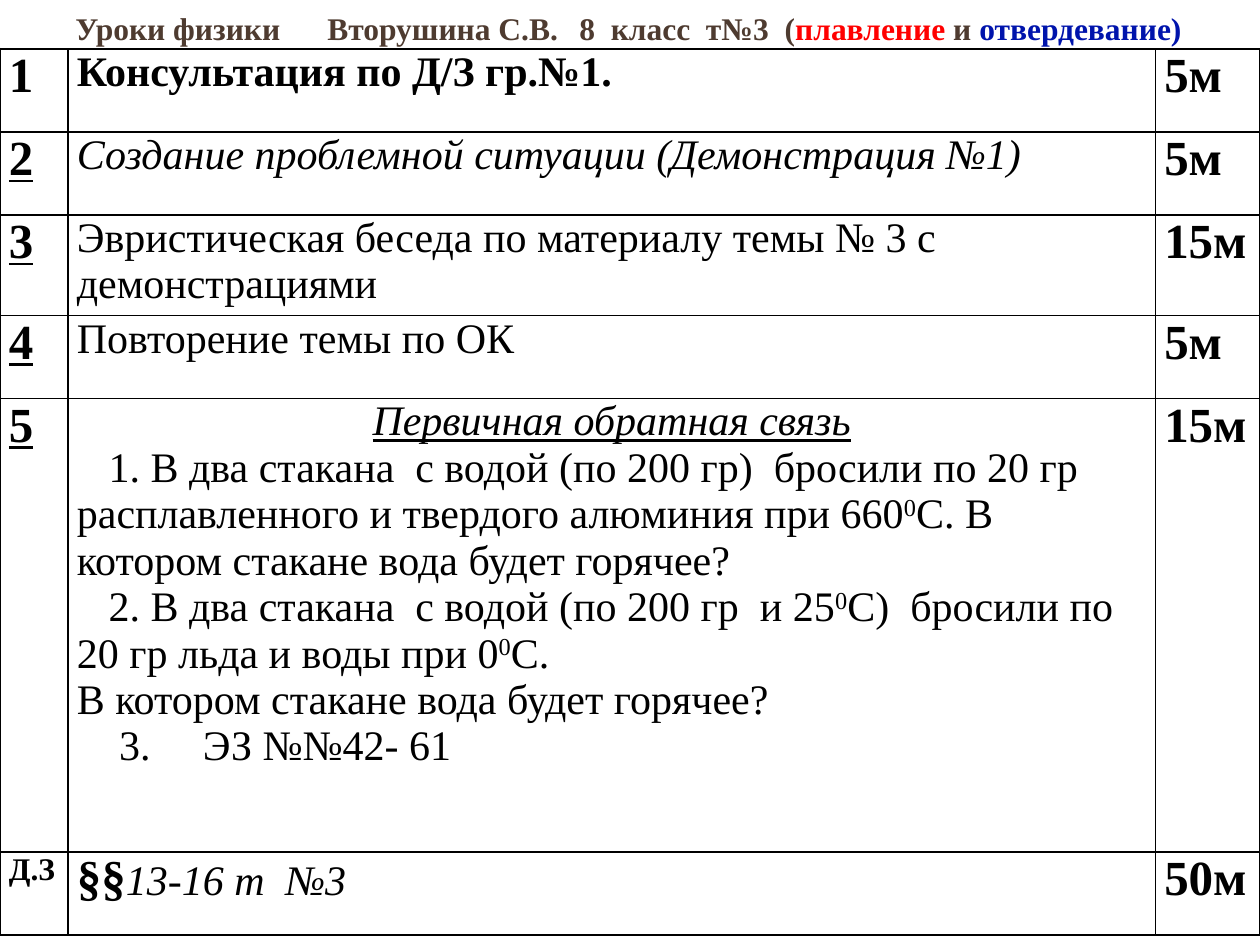
from dataclasses import dataclass

from lxml import etree
from pptx import Presentation
from pptx import util as u
from pptx.dml.color import RGBColor
from pptx.enum import text
from pptx.oxml import ns


@dataclass(frozen=True)
class Theme:
    font: str = "Times New Roman"
    black: str = "000000"
    brown: str = "4E3B30"
    red: str = "FF0000"
    blue: str = "0014AC"
    small: int = 18
    body: int = 24
    large: int = 28
    thin: float = 1
    thick: float = 1.5


T = Theme()


# Text helpers
def add_run(p, words, size=T.body, color=T.black, bold=False, italic=False,
            underline=False, raised=False):
    r = p.add_run()
    r.text = words
    f = r.font
    f.name, f.size, f.bold, f.italic = T.font, u.Pt(size), bold, italic
    f.underline = underline
    f.color.rgb = RGBColor.from_string(color)
    if raised:
        r._r.get_or_add_rPr().set("baseline", "30000")


def set_layout(p, indent=0, tabs=()):
    """First-line indent and tab stops, in centimetres."""
    pPr = p._p.get_or_add_pPr()
    pPr.set("marL", "0")
    pPr.set("indent", str(u.Cm(indent)))
    if tabs:
        stops = etree.SubElement(pPr, ns.qn("a:tabLst"))
        for pos in tabs:
            etree.SubElement(stops, ns.qn("a:tab"), pos=str(u.Cm(pos)), algn="l")


def set_border(cell, widths):
    tcPr = cell._tc.get_or_add_tcPr()
    for i, (side, width) in enumerate(zip("LRTB", widths)):
        ln = etree.Element(ns.qn("a:ln" + side), w=str(u.Pt(width)))
        fill = etree.SubElement(ln, ns.qn("a:solidFill"))
        etree.SubElement(fill, ns.qn("a:srgbClr"), val=T.black)
        tcPr.insert(i, ln)


# Lesson plan: number, content paragraphs, duration.
# A paragraph is (layout, runs); a run is (words, style).
PLAIN, BOLD, ITALIC = {}, {"bold": True}, {"italic": True}
HEADING = {"italic": True, "underline": True}
RAISED = {"raised": True}
TASK = {"indent": 0.64}

FEEDBACK = [
    ({"centred": True}, [("Первичная обратная связь", HEADING)]),
    (TASK, [("1. В два стакана  с водой (по 200 гр)  бросили по 20 гр "
             "расплавленного и твердого алюминия при 660", PLAIN), ("0", RAISED),
            ("С. В котором стакане вода будет горячее?", PLAIN)]),
    (TASK, [("2. В два стакана  с водой (по 200 гр  и 25", PLAIN), ("0", RAISED),
            ("С)  бросили по 20 гр льда и воды при 0", PLAIN), ("0", RAISED),
            ("С.", PLAIN)]),
    ({}, [("В котором стакане вода будет горячее?", PLAIN)]),
    ({"indent": 0.85, "tabs": [2.33]}, [("3.\tЭЗ №№42- 61", PLAIN)]),
]
LESSON = [
    ("1", [({}, [("Консультация по Д/З гр.№1.", BOLD)])], "5м"),
    ("2", [({}, [("Создание проблемной ситуации (Демонстрация №1)", ITALIC)])], "5м"),
    ("3", [({}, [("Эвристическая беседа по материалу темы № 3 с демонстрациями",
                  PLAIN)])], "15м"),
    ("4", [({}, [("Повторение темы по ОК", PLAIN)])], "5м"),
    ("5", FEEDBACK, "15м"),
    ("Д.З", [({}, [("§§", {"size": T.large, "bold": True}),
                   ("13-16 т  №3", ITALIC)])], "50м"),
]


def add_title(s, left, top, width, height):
    tf = s.shapes.add_textbox(left, top, width, height).text_frame
    tf.word_wrap = True
    tf.vertical_anchor = text.MSO_ANCHOR.MIDDLE
    p = tf.paragraphs[0]
    set_layout(p, tabs=[4.76, 10.34])
    for words, color in [("Уроки физики\tВторушина С.В.\t8  класс  т№3  (", T.brown),
                         ("плавление ", T.red), ("и ", T.brown),
                         ("отвердевание)", T.blue)]:
        add_run(p, words, T.small, color, bold=True)


def fill_content(tf, paragraphs):
    for i, (layout, runs) in enumerate(paragraphs):
        p = tf.add_paragraph() if i else tf.paragraphs[0]
        if layout.get("centred"):
            p.alignment = text.PP_ALIGN.CENTER
        else:
            set_layout(p, **layout)
        for words, style in runs:
            add_run(p, words, **style)


def add_plan(s, left, top, width):
    row_height, tall, number_w, time_w = u.Cm(1.67), u.Cm(9.14), u.Cm(1.37), u.Cm(2.11)
    last = len(LESSON) - 1
    heights = [tall if lines is FEEDBACK else row_height for _, lines, _ in LESSON]
    table = s.shapes.add_table(len(LESSON), 3, left, top, width, sum(heights)).table
    table.first_row = table.horz_banding = False
    for col, w in zip(table.columns, (number_w, width - number_w - time_w, time_w)):
        col.width = w

    for i, (number, lines, time) in enumerate(LESSON):
        table.rows[i].height = heights[i]
        cells = [table.cell(i, j) for j in range(3)]
        for j, cell in enumerate(cells):
            cell.margin_left = cell.margin_right = u.Cm(0.18)
            cell.margin_top = cell.margin_bottom = 0
            cell.fill.background()
            # Thick lines: left edge, number column, and around the homework row
            heavy = (j == 0 or (j == 1 and i < last),
                     (j == 0 and i < last) or (j == 2 and i == last),
                     i == last or (i == 0 and j == 0),
                     i >= last - 1)
            set_border(cell, [T.thick if h else T.thin for h in heavy])
        add_run(cells[0].text_frame.paragraphs[0], number,
                T.small if i == last else T.large, bold=True,
                underline=0 < i < last)
        fill_content(cells[1].text_frame, lines)
        add_run(cells[2].text_frame.paragraphs[0], time, T.large, bold=True)


def main():
    prs = Presentation()
    prs.slide_width, prs.slide_height = u.Cm(25.4), u.Cm(19.05)
    s = prs.slides.add_slide(prs.slide_layouts[6])
    add_title(s, u.Cm(1.27), 0, u.Cm(23.14), u.Cm(1.14))
    add_plan(s, 0, u.Cm(0.99), prs.slide_width)
    prs.save("out.pptx")


if __name__ == "__main__":
    main()
